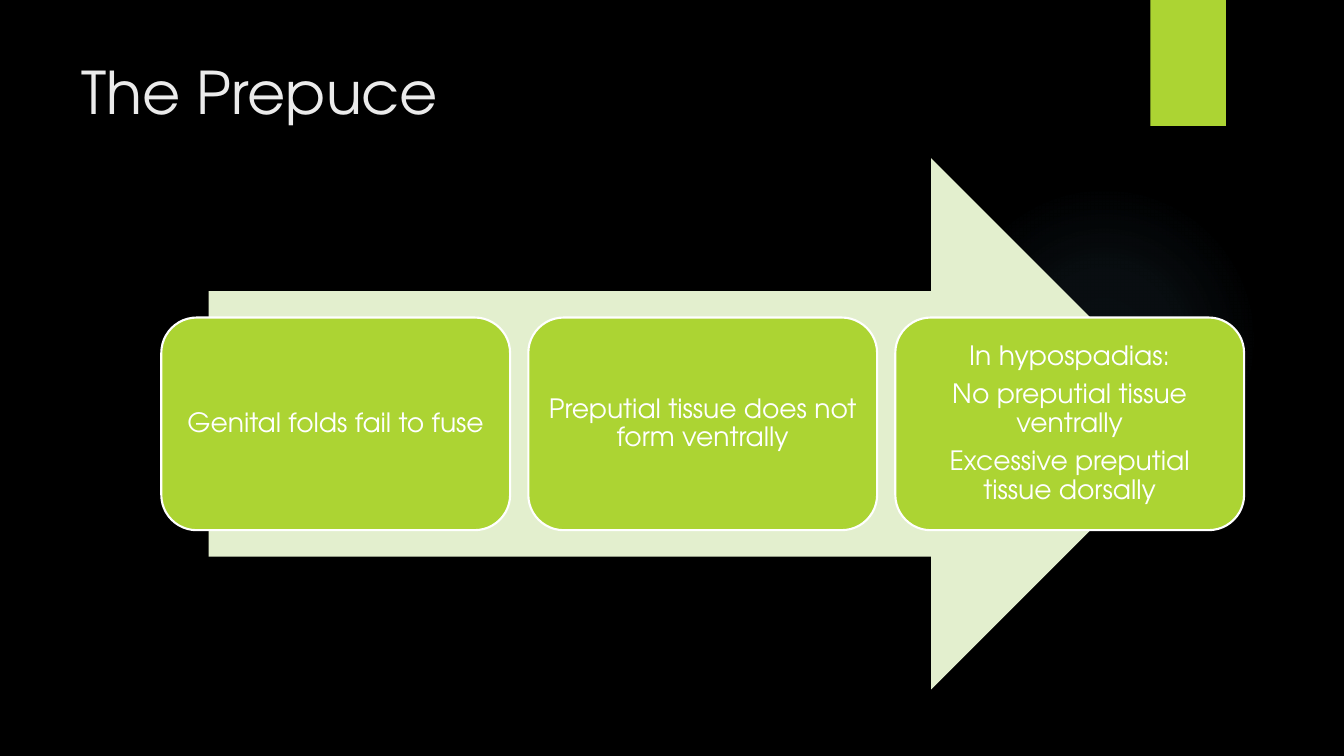
from pptx import Presentation
from pptx.dml.color import RGBColor
from pptx.enum.shapes import MSO_SHAPE as Shape
from pptx.enum.text import MSO_ANCHOR as Anchor, PP_ALIGN as Align
from pptx.oxml import parse_xml
from pptx.oxml.ns import nsdecls
from pptx.util import Inches, Pt

# Content
TITLE = "The Prepuce"
STEPS = [
    ["Genital folds fail to fuse"],
    ["Preputial tissue does not form ventrally"],
    ["In hypospadias:", "No preputial tissue ventrally",
     "Excessive preputial tissue dorsally"],
]

# Look
BLACK = RGBColor(0x00, 0x00, 0x00)
WHITE = RGBColor(0xFF, 0xFF, 0xFF)
SOFT_WHITE = RGBColor(0xEB, 0xEB, 0xEB)
LIME = RGBColor(0xAC, 0xD4, 0x33)
PALE_LIME = RGBColor(0xE3, 0xEF, 0xCE)
GLOW_BLUE = RGBColor(0x7A, 0xC4, 0xF0)
GLOW_STOPS = [(0, 7), (36, 6), (69, 0)]  # position and opacity, percent
FONT = "TeX Gyre Adventor"
TITLE_FONT = {"name": FONT, "size": Pt(42)}
STEP_FONT = {"name": FONT, "size": Pt(19)}
STEP_PARAGRAPH = {"alignment": Align.CENTER, "line_spacing": 0.9,
                  "space_after": Pt(7)}
STEP_FRAME = {"word_wrap": True, "vertical_anchor": Anchor.MIDDLE,
              **{f"margin_{side}": Inches(0.08)
                 for side in ("left", "top", "right", "bottom")}}

# Layout, in inches
STEP_LEFT, STEP_TOP, STEP_WIDTH, STEP_HEIGHT = 1.6, 3.15, 3.46, 2.11
STEP_PITCH = 3.64


def apply(target, values):
    for name, value in values.items():
        setattr(target, name, value)


def add_block(slide, kind, box, color):
    block = slide.shapes.add_shape(kind, *map(Inches, box))
    block.shadow.inherit = False
    block.fill.solid()
    block.fill.fore_color.rgb = color
    block.line.fill.background()
    return block


def fade_outward(block, color, stops):
    marks = "".join(
        f'<a:gs pos="{pos * 1000}"><a:srgbClr val="{color}">'
        f'<a:alpha val="{opacity * 1000}"/></a:srgbClr></a:gs>'
        for pos, opacity in stops)
    gradient = parse_xml(
        f'<a:gradFill {nsdecls("a")}><a:gsLst>{marks}</a:gsLst>'
        '<a:path path="circle"><a:fillToRect l="50000" t="50000" '
        'r="50000" b="50000"/></a:path></a:gradFill>')
    props = block.element.spPr
    solid = props.find("{*}solidFill")
    props.replace(solid, gradient)


def write(paragraph, text, font, color):
    paragraph.text = text
    apply(paragraph.font, font)
    paragraph.font.color.rgb = color


def main():
    deck = Presentation()
    deck.slide_width, deck.slide_height = Inches(13.33), Inches(7.5)
    slide = deck.slides.add_slide(deck.slide_layouts[6])
    slide.background.fill.solid()
    slide.background.fill.fore_color.rgb = BLACK

    # Backdrop
    glow = add_block(slide, Shape.OVAL, (9.41, 1.83, 3.08, 3.08), GLOW_BLUE)
    fade_outward(glow, GLOW_BLUE, GLOW_STOPS)
    add_block(slide, Shape.RECTANGLE, (11.41, 0, 0.75, 1.25), LIME)

    # Title
    title = slide.shapes.add_textbox(*map(Inches, (0.71, 0.5, 10.29, 1.53)))
    title.text_frame.word_wrap = True
    write(title.text_frame.paragraphs[0], TITLE, TITLE_FONT, SOFT_WHITE)

    # Arrow with the steps along it
    add_block(slide, Shape.RIGHT_ARROW, (2.07, 1.57, 9.8, 5.27), PALE_LIME)
    for index, lines in enumerate(STEPS):
        left = STEP_LEFT + index * STEP_PITCH
        step = add_block(slide, Shape.ROUNDED_RECTANGLE,
                         (left, STEP_TOP, STEP_WIDTH, STEP_HEIGHT), LIME)
        step.line.color.rgb = WHITE
        step.line.width = Pt(1.5)
        frame = step.text_frame
        apply(frame, STEP_FRAME)
        for number, line in enumerate(lines):
            paragraph = frame.add_paragraph() if number else frame.paragraphs[0]
            apply(paragraph, STEP_PARAGRAPH)
            write(paragraph, line, STEP_FONT, WHITE)

    deck.save("out.pptx")


if __name__ == "__main__":
    main()
